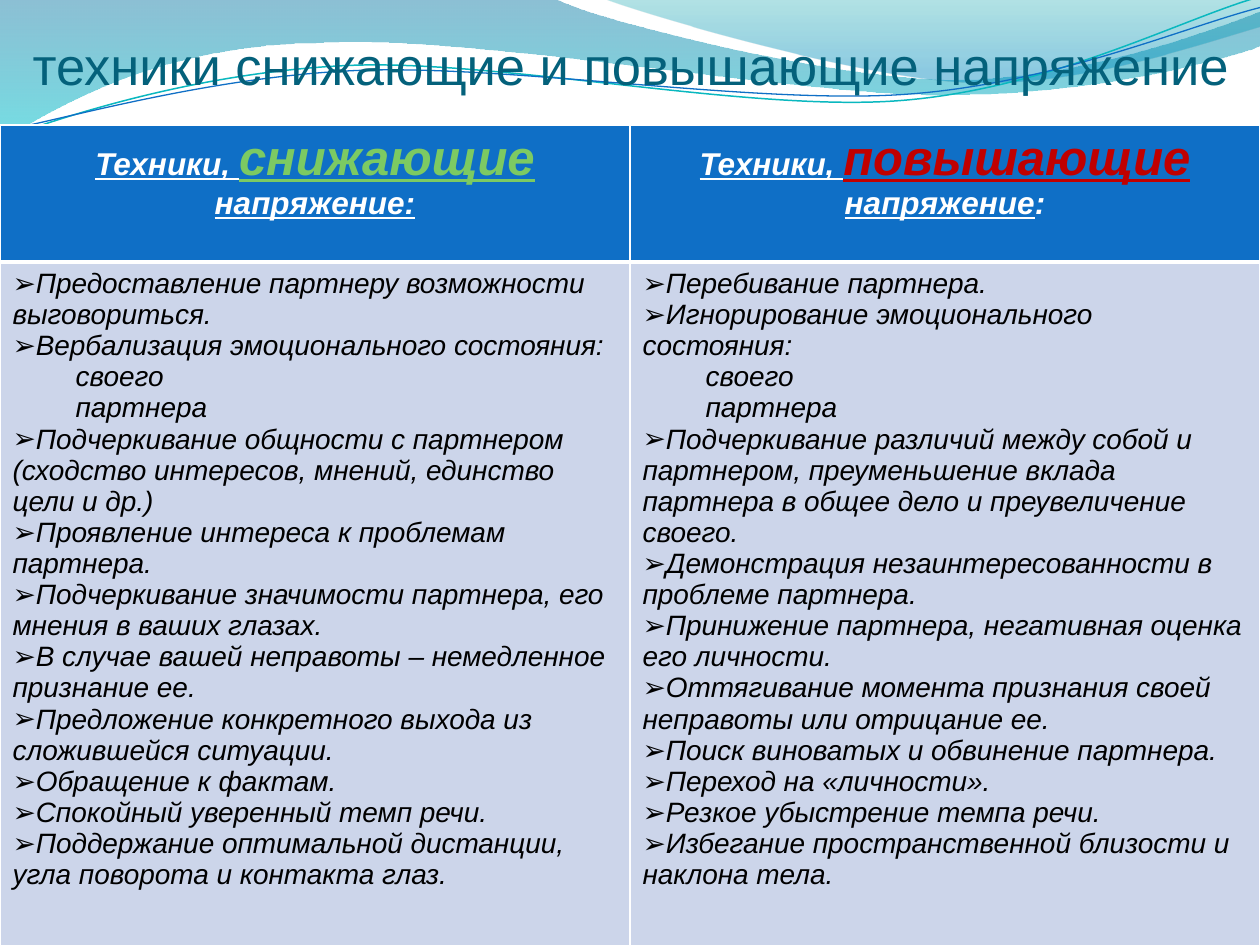
from lxml import etree
from pptx import Presentation
from pptx.dml.color import RGBColor
from pptx.enum.text import PP_ALIGN
from pptx.oxml.ns import qn
from pptx.util import Inches, Pt

CENTER = PP_ALIGN.CENTER
FONT = "Arial"
WHITE, BLACK, BLUE, PALE = "FFFFFF", "000000", "0F6FC6", "CCD5EA"
GREEN, RED, TEAL = "7CCA62", "C00000", "04617B"

# Each wave: start point, then Bezier segments (3 points) or lines (1 point).
LEFT_WAVE = [
    [(0, -0.01)], [(4.4, -0.01)], [(4.76, 0.17), (6.64, 0.63), (7.58, 0.63)],
    [(8.53, 0.63), (9.58, 0.26), (10, 0.09)], [(10.01, 0.36)],
    [(9.83, 0.44), (8.7, 0.76), (7.46, 0.75)],
    [(6.22, 0.75), (3.82, 0.28), (2.57, 0.34)],
    [(1.29, 0.35), (0.46, 0.83), (-0.01, 1.13)], [(0, -0.01)]]
RIGHT_WAVE = [
    [(4.79, -0.01)], [(5.09, 0.11), (6.82, 0.62), (7.69, 0.65)],
    [(8.56, 0.69), (9.61, 0.32), (10, 0.21)], [(10, 0)], [(4.79, -0.01)]]
CYAN_LINE = [
    [(0, 1.11)], [(0.48, 0.93), (1.58, 0.57), (2.77, 0.52)],
    [(3.95, 0.47), (5.93, 0.89), (7.13, 0.8)],
    [(8.33, 0.71), (9.38, 0.15), (9.98, -0.02)]]
BLUE_LINE = [
    [(0, 1.04)], [(0.47, 0.96), (1.64, 0.61), (2.83, 0.56)],
    [(4.03, 0.51), (5.97, 0.83), (7.17, 0.75)],
    [(8.36, 0.67), (9.41, 0.21), (10, 0.06)]]

# Header runs: text, size, colour, underline.
HEADERS = [
    [("Техники, ", 18, WHITE, True), ("снижающие ", 28, GREEN, True),
     ("напряжение:", 18, WHITE, True)],
    [("Техники, ", 18, WHITE, True), ("повышающие ", 28, RED, True),
     ("напряжение", 18, WHITE, True), (":", 18, WHITE, False)],
]
SUBITEMS = ("своего", "партнера")
TECHNIQUES = [
    ["Предоставление партнеру возможности выговориться.",
     "Вербализация эмоционального состояния:",
     *SUBITEMS,
     "Подчеркивание общности с партнером (сходство интересов, мнений, единство цели и др.)",
     "Проявление интереса к проблемам партнера.",
     "Подчеркивание значимости партнера, его мнения в ваших глазах.",
     "В случае вашей неправоты – немедленное признание ее.",
     "Предложение конкретного выхода из сложившейся ситуации.",
     "Обращение к фактам.",
     "Спокойный уверенный темп речи.",
     "Поддержание оптимальной дистанции, угла поворота и контакта глаз."],
    ["Перебивание партнера.",
     "Игнорирование эмоционального состояния:",
     *SUBITEMS,
     "Подчеркивание различий между собой и партнером, преуменьшение вклада "
     "партнера в общее дело и преувеличение своего.",
     "Демонстрация незаинтересованности в проблеме партнера.",
     "Принижение партнера, негативная оценка его личности.",
     "Оттягивание момента признания своей неправоты или отрицание ее.",
     "Поиск виноватых и обвинение партнера.",
     "Переход на «личности».",
     "Резкое убыстрение темпа речи.",
     "Избегание пространственной близости и наклона тела."],
]


def rgb(color):
    return RGBColor.from_string(color)


def add_run(p, text, size, color, bold=False, italic=False, underline=False):
    r = p.add_run()
    r.text = text
    f = r.font
    f.name, f.size = FONT, Pt(size)
    f.bold, f.italic, f.underline = bold, italic, underline
    f.color.rgb = rgb(color)


def add_curve(s, x, y, segments, close):
    """Build a freeform, then join each three-point segment into a Bezier curve."""
    points = [(Inches(x + px), Inches(y + py)) for seg in segments for px, py in seg]
    builder = s.shapes.build_freeform(*points[0])
    builder.add_line_segments(points[1:], close=close)
    sp = builder.convert_to_shape()
    sp.shadow.inherit = False
    lines = iter(list(sp.element.iter(qn("a:lnTo"))))
    for seg in segments[1:]:
        parts = [next(lines) for _ in seg]
        if len(parts) == 3:
            curve = etree.Element(qn("a:cubicBezTo"))
            parts[0].addprevious(curve)
            for part in parts:
                curve.append(part[0])
                part.getparent().remove(part)
    return sp


def add_wave(s, x, y, segments, stops):
    """Add a filled wave; stops are (position, colour, opacity in percent)."""
    sp = add_curve(s, x, y, segments, True)
    sp.line.fill.background()
    sp.fill.gradient()
    sp.fill.gradient_angle = 270
    for stop, (position, color, _) in zip(sp.fill.gradient_stops, stops):
        stop.position = position
        stop.color.rgb = rgb(color)
    for clr, (_, _, opacity) in zip(sp.element.spPr.iter(qn("a:srgbClr")), stops):
        etree.SubElement(clr, qn("a:alpha"), val=str(opacity * 1000))


def add_wave_line(s, x, y, segments, color, width):
    sp = add_curve(s, x, y, segments, False)
    sp.fill.background()
    sp.line.color.rgb = rgb(color)
    sp.line.width = Pt(width)


def add_waves(s, x, y):
    add_wave(s, x, y, LEFT_WAVE, [(0, "0074A1", 45), (1, "00C6CF", 55)])
    add_wave(s, x, y, RIGHT_WAVE, [(0, "00A1A9", 30), (0.8, "008BBF", 45)])
    add_wave_line(s, x, y, CYAN_LINE, "0AB8BF", 0.85)
    add_wave_line(s, x, y, BLUE_LINE, BLUE, 0.75)


def style_cell(cell, fill, bottom):
    """Draw white borders and the fill; bottom is the lower border's width."""
    tcPr = cell._tc.get_or_add_tcPr()
    for side, width in (("L", 1), ("R", 1), ("T", 1), ("B", bottom)):
        ln = etree.SubElement(tcPr, qn("a:ln" + side), w=str(Pt(width)))
        solid = etree.SubElement(ln, qn("a:solidFill"))
        etree.SubElement(solid, qn("a:srgbClr"), val=WHITE)
    cell.fill.solid()
    cell.fill.fore_color.rgb = rgb(fill)


def format_item(p, is_subitem):
    pPr = p._p.get_or_add_pPr()
    pPr.set("marL", str(Inches(0.5) if is_subitem else 0))
    pPr.set("indent", "0")
    if is_subitem:
        p.level = 1
        etree.SubElement(pPr, qn("a:buNone"))
    else:
        etree.SubElement(pPr, qn("a:buFont"), typeface=FONT)
        etree.SubElement(pPr, qn("a:buChar"), char="➢")


def add_techniques_table(s, x, y, w, row_heights):
    table = s.shapes.add_table(2, len(HEADERS), Inches(x), Inches(y),
                               Inches(w), Inches(sum(row_heights))).table
    for row, height in zip(table.rows, row_heights):
        row.height = Inches(height)
    for col, (header, items) in enumerate(zip(HEADERS, TECHNIQUES)):
        head, body = table.cell(0, col), table.cell(1, col)
        style_cell(head, BLUE, 3)
        style_cell(body, PALE, 1)
        p = head.text_frame.paragraphs[0]
        p.alignment = CENTER
        for text, size, color, underline in header:
            add_run(p, text, size, color, True, True, underline)
        tf = body.text_frame
        for i, item in enumerate(items):
            p = tf.add_paragraph() if i else tf.paragraphs[0]
            format_item(p, item in SUBITEMS)
            add_run(p, item, 16, BLACK, italic=True)


def add_title(s, x, y, w, h):
    tf = s.shapes.add_textbox(Inches(x), Inches(y), Inches(w), Inches(h)).text_frame
    tf.word_wrap = True
    p = tf.paragraphs[0]
    p.alignment = CENTER
    add_run(p, "техники снижающие и повышающие напряжение", 30, TEAL)


def main():
    prs = Presentation()
    prs.slide_width, prs.slide_height = Inches(10), Inches(7.5)
    s = prs.slides.add_slide(prs.slide_layouts[6])
    add_waves(s, 0, 0)
    add_techniques_table(s, 0, 0.99, 10, (1.09, 5.98))
    add_title(s, 0.02, 0.21, 9.98, 1.01)
    prs.save("out.pptx")


if __name__ == "__main__":
    main()
